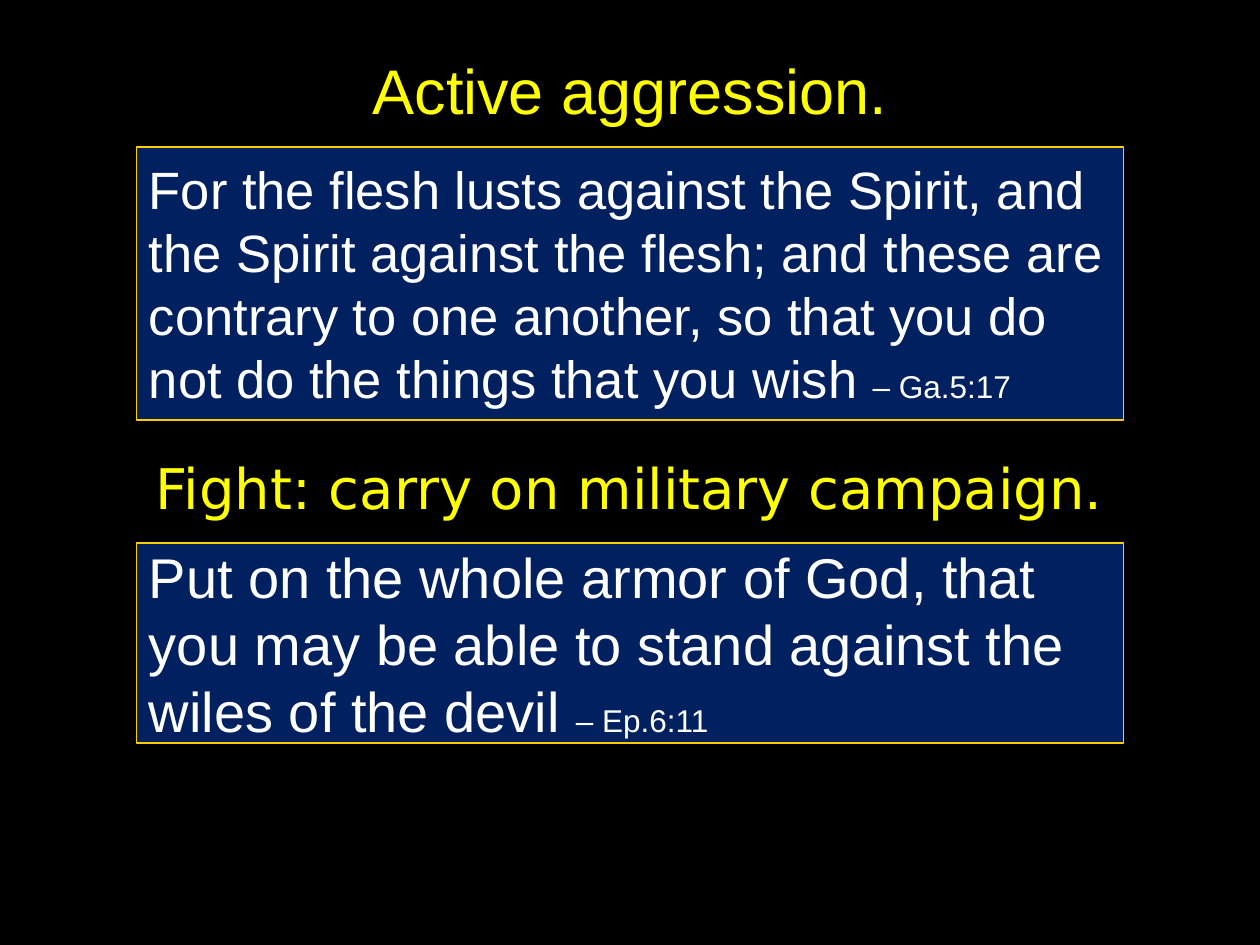
"""Build a slide pairing two yellow headings with framed scripture quotations."""
import pptx
import pptx.dml.color
import pptx.enum.shapes
import pptx.enum.text
import pptx.util

Pt = pptx.util.Pt
RGBColor = pptx.dml.color.RGBColor
ALIGN = pptx.enum.text.PP_ALIGN

BLACK = RGBColor(0, 0, 0)
WHITE = RGBColor(255, 255, 255)
YELLOW = RGBColor(255, 255, 0)
NAVY = RGBColor(0, 32, 96)
GOLD = RGBColor(255, 204, 0)


class VerseSlide:
    font = "Arial"
    reference_size = 18
    heading_left, heading_width = 36, 648
    quote_left, quote_width = 78, 564

    def __init__(self, deck):
        self.page = deck.slides.add_slide(deck.slide_layouts[6])
        self.page.background.fill.solid()
        self.page.background.fill.fore_color.rgb = BLACK

    def add_spans(self, box, align, color, spans):
        frame = box.text_frame
        frame.word_wrap = True
        frame.vertical_anchor = pptx.enum.text.MSO_ANCHOR.MIDDLE
        para = frame.paragraphs[0]
        para.alignment = align
        for text, size, font in spans:
            span = para.add_run()
            span.text = text
            span.font.size = Pt(size)
            span.font.name = font
            span.font.color.rgb = color

    def heading(self, text, top, height, size, font=font):
        box = self.page.shapes.add_textbox(
            Pt(self.heading_left), Pt(top), Pt(self.heading_width), Pt(height))
        self.add_spans(box, ALIGN.CENTER, YELLOW, [(text, size, font)])

    def quote(self, text, reference, top, height, size):
        box = self.page.shapes.add_shape(
            pptx.enum.shapes.MSO_SHAPE.RECTANGLE,
            Pt(self.quote_left), Pt(top), Pt(self.quote_width), Pt(height))
        box.shadow.inherit = False
        box.fill.solid()
        box.fill.fore_color.rgb = NAVY
        box.line.color.rgb = GOLD
        box.line.width = Pt(1)
        self.add_spans(box, ALIGN.LEFT, WHITE, [
            (text, size, self.font),
            (reference, self.reference_size, self.font)])


def main():
    deck = pptx.Presentation()
    deck.slide_width, deck.slide_height = Pt(720), Pt(540)
    slide = VerseSlide(deck)
    slide.heading("Active aggression.", 6, 90, 36)
    slide.heading("Fight: carry on military campaign.", 253.6, 50, 32, "DejaVu Sans")
    slide.quote(
        "For the flesh lusts against the Spirit, and the Spirit against the flesh; "
        "and these are contrary to one another, so that you do not do the things "
        "that you wish ", "– Ga.5:17", 84, 156, 30)
    slide.quote(
        "Put on the whole armor of God, that you may be able to stand against the "
        "wiles of the devil ", "– Ep.6:11", 310.5, 114, 32)
    deck.save("out.pptx")


if __name__ == "__main__":
    main()
